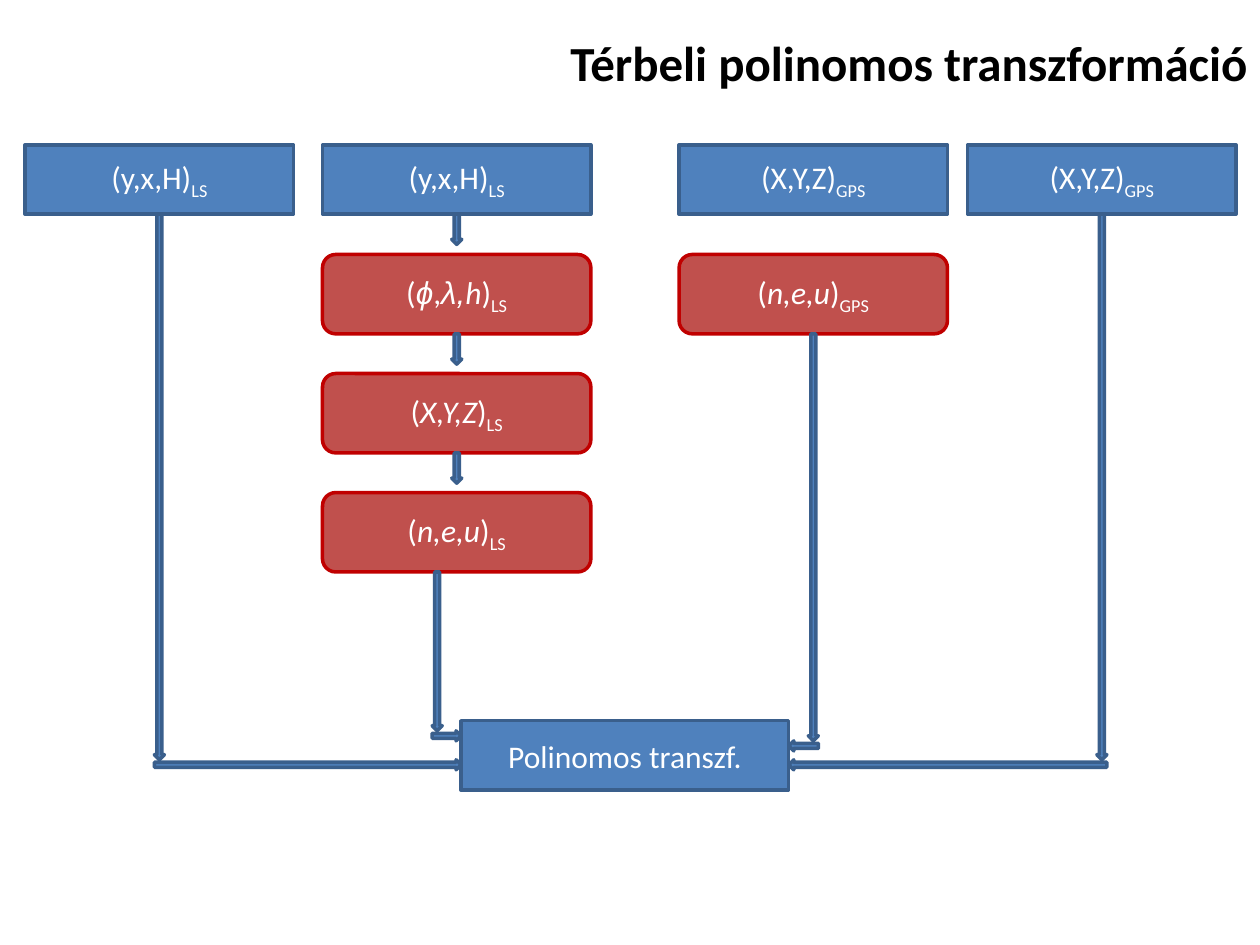
from pptx import Presentation
from pptx.dml.color import RGBColor
from pptx.enum.shapes import MSO_SHAPE
from pptx.enum.text import MSO_ANCHOR, MSO_AUTO_SIZE, PP_ALIGN
from pptx.util import Inches, Pt

BLUE, BLUE_EDGE = "4F81BD", "3A5F8C"
RED, RED_EDGE = "C0504D", "C00000"
WHITE, BLACK = "FFFFFF", "000000"

BOX_WIDTH = 2.13
INPUT_TOP, INPUT_HEIGHT = 1.15, 0.55
STEP_TOP, STEP_HEIGHT, STEP_PITCH = 2.02, 0.63, 0.945
ARROW = 0.08
SHORT = 0.24
RESULT_LEFT, RESULT_TOP, RESULT_WIDTH = 3.66, 5.72, 2.6
COLUMNS = [0.2, 2.56, 5.39, 7.68]


def color(hex_string):
    return RGBColor.from_string(hex_string)


def add_span(para, text, size=18, fill=WHITE, font="Calibri", bold=False,
             italic=False, subscript=False):
    span = para.add_run()
    span.text = text
    span.font.name = font
    span.font.size = Pt(size)
    span.font.bold = bold
    span.font.italic = italic
    span.font.color.rgb = color(fill)
    if subscript:
        span.font._element.set("baseline", "-25000")


def add_filled_shape(page, kind, left, top, width, height,
                     fill=BLUE, edge=BLUE_EDGE):
    shape = page.shapes.add_shape(
        kind, Inches(left), Inches(top), Inches(width), Inches(height))
    shape.shadow.inherit = False
    shape.fill.solid()
    shape.fill.fore_color.rgb = color(fill)
    shape.line.color.rgb = color(edge)
    shape.line.width = Pt(2)
    return shape


def centered_paragraph(box):
    box.text_frame.word_wrap = True
    box.text_frame.vertical_anchor = MSO_ANCHOR.MIDDLE
    para = box.text_frame.paragraphs[0]
    para.alignment = PP_ALIGN.CENTER
    return para


def add_coordinates(box, spans, system):
    """Write bracketed coordinates with the reference system as subscript."""
    para = centered_paragraph(box)
    add_span(para, "(")
    for text, style in spans:
        add_span(para, text, **style)
    add_span(para, ")")
    add_span(para, system, subscript=True)


def add_input(page, left, text, system):
    box = add_filled_shape(page, MSO_SHAPE.RECTANGLE, left, INPUT_TOP,
                           BOX_WIDTH, INPUT_HEIGHT)
    add_coordinates(box, [(text, {})], system)


def add_step(page, left, row, spans, system):
    box = add_filled_shape(page, MSO_SHAPE.ROUNDED_RECTANGLE, left,
                           STEP_TOP + row * STEP_PITCH, BOX_WIDTH, STEP_HEIGHT,
                           RED, RED_EDGE)
    add_coordinates(box, spans, system)


def add_down_arrow(page, center, top, length):
    add_filled_shape(page, MSO_SHAPE.DOWN_ARROW, center - ARROW / 2, top,
                     ARROW, length)


def add_path_to_result(page, center, top, turn):
    """Go down to the turn, then sideways to the nearer edge of the result."""
    add_down_arrow(page, center, top, turn - top)
    result_right = RESULT_LEFT + RESULT_WIDTH
    if center < RESULT_LEFT:
        kind, start, end = MSO_SHAPE.RIGHT_ARROW, center - ARROW / 2, RESULT_LEFT
    else:
        kind, start, end = MSO_SHAPE.LEFT_ARROW, result_right, center + ARROW / 2
    add_filled_shape(page, kind, start, turn, end - start, ARROW)


def add_title(page, text):
    title = page.shapes.title
    title.left, title.top = Inches(1.05), Inches(0.21)
    title.width, title.height = Inches(8.95), Inches(0.57)
    frame = title.text_frame
    frame.word_wrap = True
    frame.auto_size = MSO_AUTO_SIZE.SHAPE_TO_FIT_TEXT
    frame.vertical_anchor = MSO_ANCHOR.TOP
    para = frame.paragraphs[0]
    para.alignment = PP_ALIGN.RIGHT
    add_span(para, text, size=28, fill=BLACK, bold=True)


def main():
    deck = Presentation()
    deck.slide_width, deck.slide_height = Inches(10), Inches(7.5)
    page = deck.slides.add_slide(deck.slide_layouts[5])
    add_title(page, "Térbeli polinomos transzformáció")

    inputs = [("y,x,H", "LS"), ("y,x,H", "LS"),
              ("X,Y,Z", "GPS"), ("X,Y,Z", "GPS")]
    for left, (text, system) in zip(COLUMNS, inputs):
        add_input(page, left, text, system)

    italic = {"italic": True}
    greek = {"italic": True, "font": "Arial"}
    geographic = [("ϕ", greek), (",", {}), ("λ,", greek), ("h", italic)]
    geocentric = [("X,Y,Z", italic)]
    local = [("n,e,u", italic)]
    for row, spans in enumerate([geographic, geocentric, local]):
        add_step(page, COLUMNS[1], row, spans, "LS")
    add_step(page, COLUMNS[2], 0, local, "GPS")

    result = add_filled_shape(page, MSO_SHAPE.RECTANGLE, RESULT_LEFT,
                              RESULT_TOP, RESULT_WIDTH, INPUT_HEIGHT)
    add_span(centered_paragraph(result), "Polinomos transzf.")

    centers = [left + BOX_WIDTH / 2 for left in COLUMNS]
    input_bottom = INPUT_TOP + INPUT_HEIGHT
    step_bottoms = [STEP_TOP + row * STEP_PITCH + STEP_HEIGHT
                    for row in range(3)]
    for top in [input_bottom, *step_bottoms[:2]]:
        add_down_arrow(page, centers[1], top, SHORT)

    add_path_to_result(page, centers[0], input_bottom, 6.03)
    add_path_to_result(page, 3.47, step_bottoms[2], 5.8)
    add_path_to_result(page, centers[2], step_bottoms[0], 5.88)
    add_path_to_result(page, centers[3], input_bottom, 6.03)
    deck.save("out.pptx")


if __name__ == "__main__":
    main()
